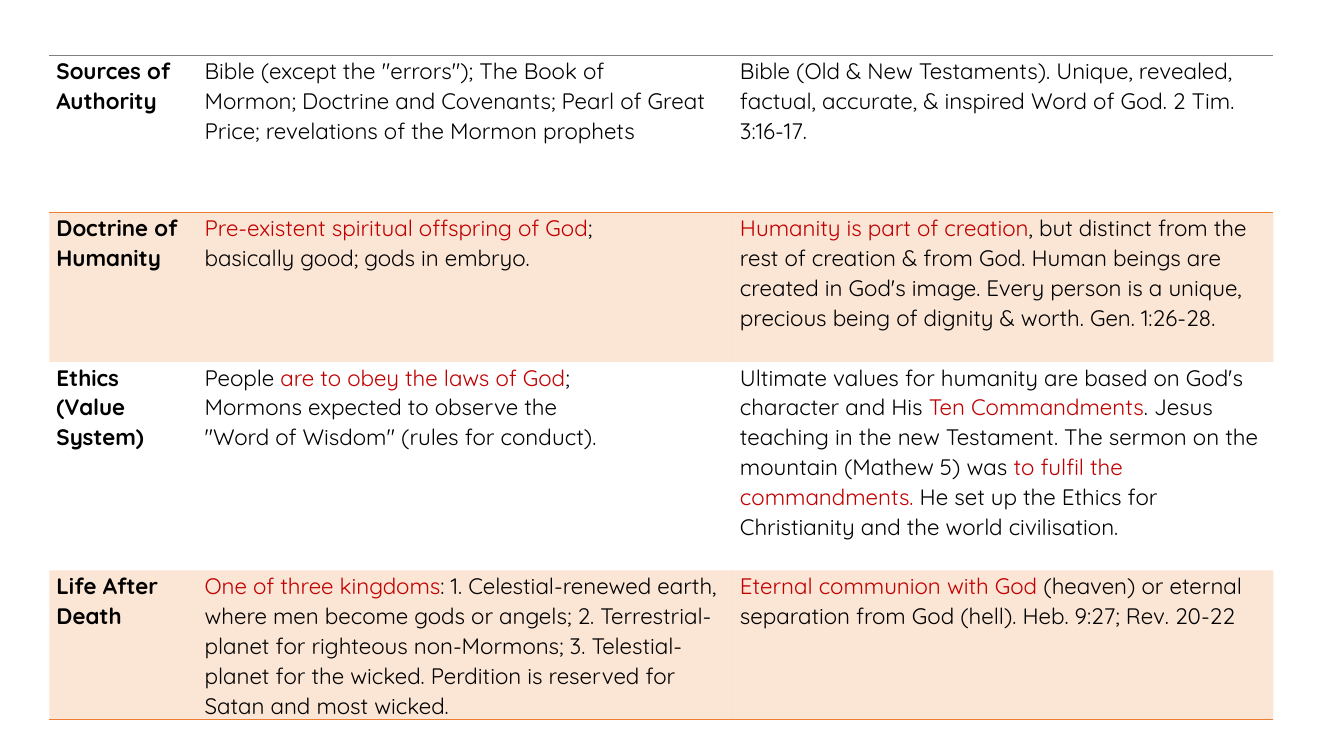
from lxml.etree import SubElement
from pptx import Presentation
from pptx.dml.color import RGBColor
from pptx.oxml.ns import qn
from pptx.util import Inches, Pt

COLORS = {"text": "000000", "accent": "C00000", "band": "ED7D31", "top": "808080"}
FONT = "Quicksand"
NO_GRID_STYLE = "{2D5ABB26-0587-4C30-8999-92F81FD0307C}"
LEFT, TOP = 0.49, 0.55
COLUMN_WIDTHS = (1.47, 5.31, 5.36)
ROW_HEIGHTS = (1.56, 1.48, 2.07, 1.47)
BELIEFS = [
    (
        "Sources of Authority",
        'Bible (except the "errors"); The Book of\n'
        "Mormon; Doctrine and Covenants; Pearl of Great Price; "
        "revelations of the Mormon prophets",
        "Bible (Old & New Testaments). Unique, revealed, factual, accurate, "
        "& inspired Word of God. 2 Tim. 3:16-17.",
    ),
    (
        "Doctrine of Humanity",
        "*Pre-existent spiritual offspring of God*;\nbasically good; gods in embryo.",
        "*Humanity is part of creation*, but distinct from the rest of creation "
        "& from God. Human beings are created in God's image. Every person is a "
        "unique, precious being of dignity & worth. Gen. 1:26-28.",
    ),
    (
        "Ethics (Value System)",
        "People *are to obey the laws of God*;\nMormons expected to observe the\n"
        '"Word of Wisdom" (rules for conduct).',
        "Ultimate values for humanity are based on God's character and His "
        "*Ten Commandments*. Jesus teaching in the new Testament. The sermon on "
        "the mountain (Mathew 5) was *to fulfil the commandments. *He set up the "
        "Ethics for Christianity and the world civilisation.",
    ),
    (
        "Life After Death",
        "*One of three kingdoms*: 1. Celestial-renewed earth, where men become "
        "gods or angels; 2. Terrestrial-planet for righteous non-Mormons; "
        "3. Telestial-planet for the wicked. Perdition is reserved for Satan and "
        "most wicked.",
        "*Eternal communion with God *(heaven) or eternal separation from God "
        "(hell). Heb. 9:27; Rev. 20-22",
    ),
]


def write_paragraph(paragraph, marked_text, bold):
    """Write one paragraph, colouring the stretches between asterisks."""
    paragraph.line_spacing = 1.07
    for position, words in enumerate(marked_text.split("*")):
        if words:
            run = paragraph.add_run()
            run.text = words
            run.font.name, run.font.size, run.font.bold = FONT, Pt(16), bold
            tone = "accent" if position % 2 else "text"
            run.font.color.rgb = RGBColor.from_string(COLORS[tone])


def write_cell(cell, marked_text, bold):
    """Fill a cell with its paragraphs and set its margins."""
    cell.margin_left = cell.margin_right = Inches(0.07)
    cell.margin_top = cell.margin_bottom = 0
    frame = cell.text_frame
    for number, line in enumerate(marked_text.split("\n")):
        paragraph = frame.add_paragraph() if number else frame.paragraphs[0]
        write_paragraph(paragraph, line, bold)


def rule_cell(cell, edge, color):
    """Draw a one-point rule on the top or bottom edge of a cell."""
    rule = SubElement(cell._tc.get_or_add_tcPr(), qn(f"a:{edge}"), w=str(Pt(1)))
    SubElement(SubElement(rule, qn("a:solidFill")), qn("a:srgbClr"), val=color)


def tint_cell(cell):
    """Shade a cell with the band colour at a fifth of its strength."""
    cell.fill.solid()
    cell.fill.fore_color.rgb = RGBColor.from_string(COLORS["band"])
    shade = cell._tc.tcPr.find(f"{qn('a:solidFill')}/{qn('a:srgbClr')}")
    SubElement(shade, qn("a:alpha"), val="20000")


def add_belief_table(slide):
    """Add the comparison table with its rules and tinted rows."""
    frame = slide.shapes.add_table(
        len(BELIEFS), len(COLUMN_WIDTHS), Inches(LEFT), Inches(TOP),
        Inches(sum(COLUMN_WIDTHS)), Inches(sum(ROW_HEIGHTS)))
    table = frame.table
    table.first_row = table.horz_banding = False
    next(frame.element.iter(qn("a:tableStyleId"))).text = NO_GRID_STYLE
    for column, width in zip(table.columns, COLUMN_WIDTHS):
        column.width = Inches(width)
    for index, (row, belief) in enumerate(zip(table.rows, BELIEFS)):
        row.height = Inches(ROW_HEIGHTS[index])
        for place, (cell, words) in enumerate(zip(row.cells, belief)):
            write_cell(cell, words, bold=place == 0)
            if index == 0:
                rule_cell(cell, "lnT", COLORS["top"])
            if index in (0, len(BELIEFS) - 1):
                rule_cell(cell, "lnB", COLORS["band"])
            if index % 2:
                tint_cell(cell)
            else:
                cell.fill.background()


def main():
    """Build the slide and save it."""
    deck = Presentation()
    deck.slide_width, deck.slide_height = Inches(13.33), Inches(7.5)
    add_belief_table(deck.slides.add_slide(deck.slide_layouts[6]))
    deck.save("out.pptx")


if __name__ == "__main__":
    main()
